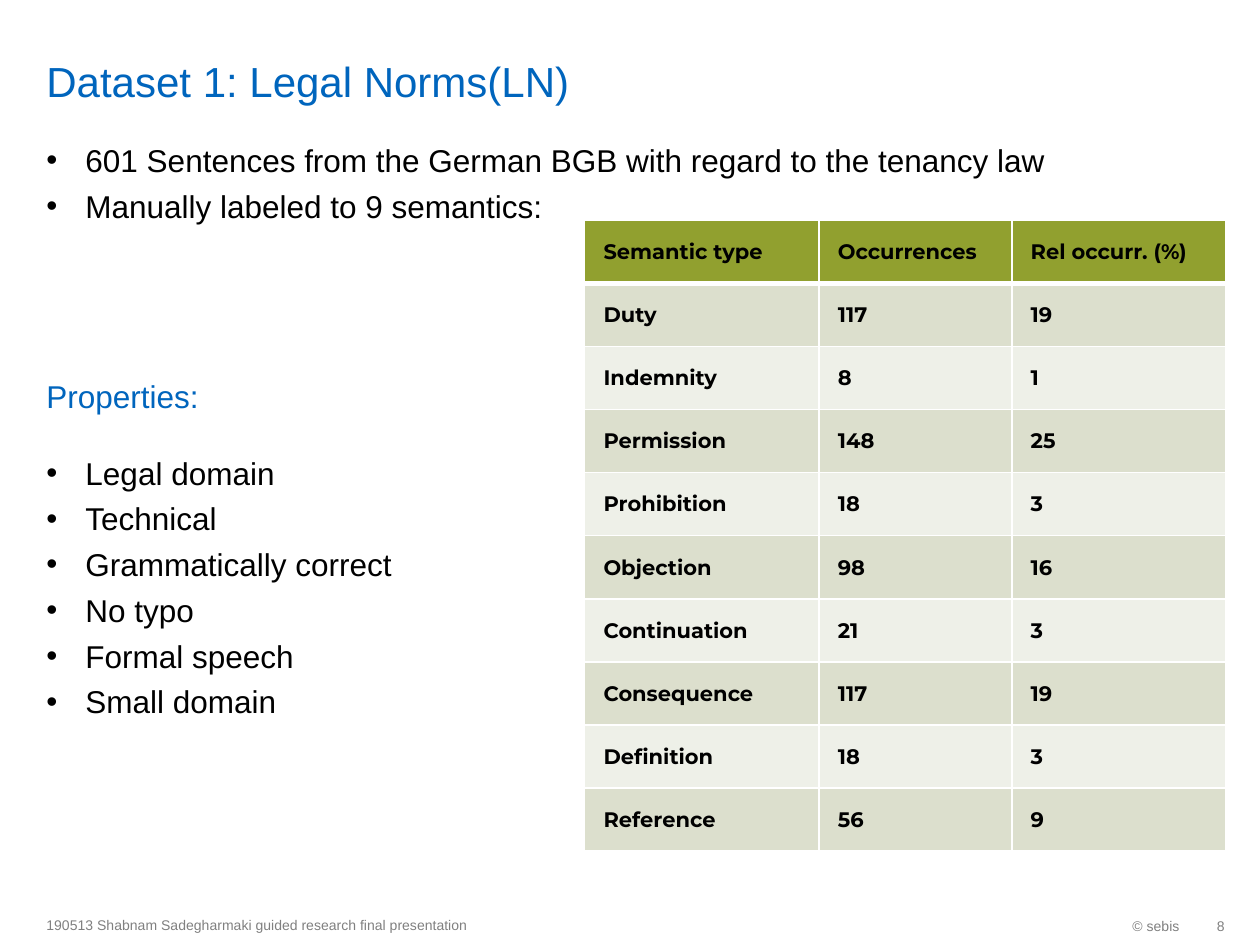
from lxml import etree
from pptx import Presentation
from pptx.dml.color import RGBColor
from pptx.enum import text
from pptx.oxml import ns
from pptx.util import Inches, Pt

COLORS = {"blue": "0065BD", "black": "000000", "gray": "808080", "white": "FFFFFF",
          "head": "91A02F", "odd": "DCDFCD", "even": "EEF0E8"}
FACTS = ["601 Sentences from the German BGB with regard to the tenancy law",
         "Manually labeled to 9 semantics:"]
TRAITS = ["Legal domain", "Technical", "Grammatically correct", "No typo",
          "Formal speech", "Small domain"]
ROWS = [("Semantic type", "Occurrences", "Rel occurr. (%)"),
        ("Duty", 117, 19), ("Indemnity", 8, 1), ("Permission", 148, 25),
        ("Prohibition", 18, 3), ("Objection", 98, 16), ("Continuation", 21, 3),
        ("Consequence", 117, 19), ("Definition", 18, 3), ("Reference", 56, 9)]
WIDTHS = [1.86, 1.53, 1.7]
PITCH, GAP = 25.25, 4.55  # list line pitch and space before, in points
SKIP = 5  # lines left free between the two lists


def rgb(name):
    return RGBColor.from_string(COLORS[name])


def style(font, size, color, face="Arial", bold=False):
    font.name, font.size, font.bold = face, Pt(size), bold
    font.color.rgb = rgb(color)


def add_text(slide, box, lines, size, color, anchor, inset=(0.1, 0.05, 0.1, 0.05),
             align=text.PP_ALIGN.LEFT):
    frame = slide.shapes.add_textbox(*map(Inches, box)).text_frame
    frame.word_wrap = True
    frame.vertical_anchor = anchor
    (frame.margin_left, frame.margin_top,
     frame.margin_right, frame.margin_bottom) = map(Inches, inset)
    frame.text = "\n".join(lines)
    for para in frame.paragraphs:
        para.alignment = align
        for run in para.runs:
            style(run.font, size, color)
    return frame


def add_bullet(para):
    props = para._p.get_or_add_pPr()
    props.set("marL", str(Inches(0.31)))
    props.set("indent", str(-Inches(0.31)))
    etree.SubElement(props, ns.qn("a:buFont")).set("typeface", "Arial")
    etree.SubElement(props, ns.qn("a:buChar")).set("char", "•")


def add_lists(slide):
    frame = add_text(slide, (0.27, 1.07, 9.45, 5.91), FACTS + TRAITS, 18, "black",
                     text.MSO_ANCHOR.TOP)
    for i, para in enumerate(frame.paragraphs):
        add_bullet(para)
        if i:
            extra = SKIP * PITCH if i == len(FACTS) else 0
            para.space_before = Pt(GAP + extra)


def add_borders(cell, row):
    """White cell edges, with a heavy rule under the header."""
    heavy = {0: "lnB", 1: "lnT"}.get(row)
    props = cell._tc.get_or_add_tcPr()
    for i, side in enumerate(["lnL", "lnR", "lnT", "lnB"]):
        line = etree.Element(ns.qn("a:" + side), w=str(Pt(3 if side == heavy else 1)))
        fill = etree.SubElement(line, ns.qn("a:solidFill"))
        etree.SubElement(fill, ns.qn("a:srgbClr")).set("val", COLORS["white"])
        props.insert(i, line)


def add_table(slide):
    height = 0.5 * len(ROWS)
    table = slide.shapes.add_table(len(ROWS), len(WIDTHS), Inches(4.64), Inches(1.75),
                                   Inches(sum(WIDTHS)), Inches(height)).table
    for col, width in zip(table.columns, WIDTHS):
        col.width = Inches(width)
    for r, values in enumerate(ROWS):
        shade = "head" if r == 0 else "odd" if r % 2 else "even"
        for c, value in enumerate(values):
            cell = table.cell(r, c)
            cell.text = str(value)
            cell.vertical_anchor = text.MSO_ANCHOR.MIDDLE
            cell.margin_left = cell.margin_right = Inches(0.15)
            cell.margin_top = cell.margin_bottom = Inches(0.15)
            cell.fill.solid()
            cell.fill.fore_color.rgb = rgb(shade)
            style(cell.text_frame.paragraphs[0].runs[0].font, 12, "black", "Montserrat", True)
            add_borders(cell, r)


def add_footer(slide):
    mid, right = text.MSO_ANCHOR.MIDDLE, text.PP_ALIGN.RIGHT
    add_text(slide, (7.7, 7.19, 1.76, 0.32), ["© sebis"], 8, "gray", mid, align=right)
    add_text(slide, (0.27, 7.18, 4.73, 0.32),
             ["190513 Shabnam Sadegharmaki guided research final presentation"],
             8, "gray", mid)
    add_text(slide, (9.45, 7.19, 0.27, 0.32), ["8"], 8, "gray", mid,
             (0.1, 0.05, 0, 0.05), right)


def main():
    deck = Presentation()
    deck.slide_width, deck.slide_height = Inches(10), Inches(7.5)
    slide = deck.slides.add_slide(deck.slide_layouts[6])
    low, inset = text.MSO_ANCHOR.BOTTOM, (0.1, 0, 0.1, 0)
    add_lists(slide)
    add_text(slide, (0.27, 0.05, 8.24, 0.79), ["Dataset 1: Legal Norms(LN)"],
             24, "blue", low, inset)
    add_footer(slide)
    add_table(slide)
    add_text(slide, (0.27, 2.5, 2.3, 0.79), ["Properties:"], 18, "blue", low, inset)
    deck.save("out.pptx")


if __name__ == "__main__":
    main()
